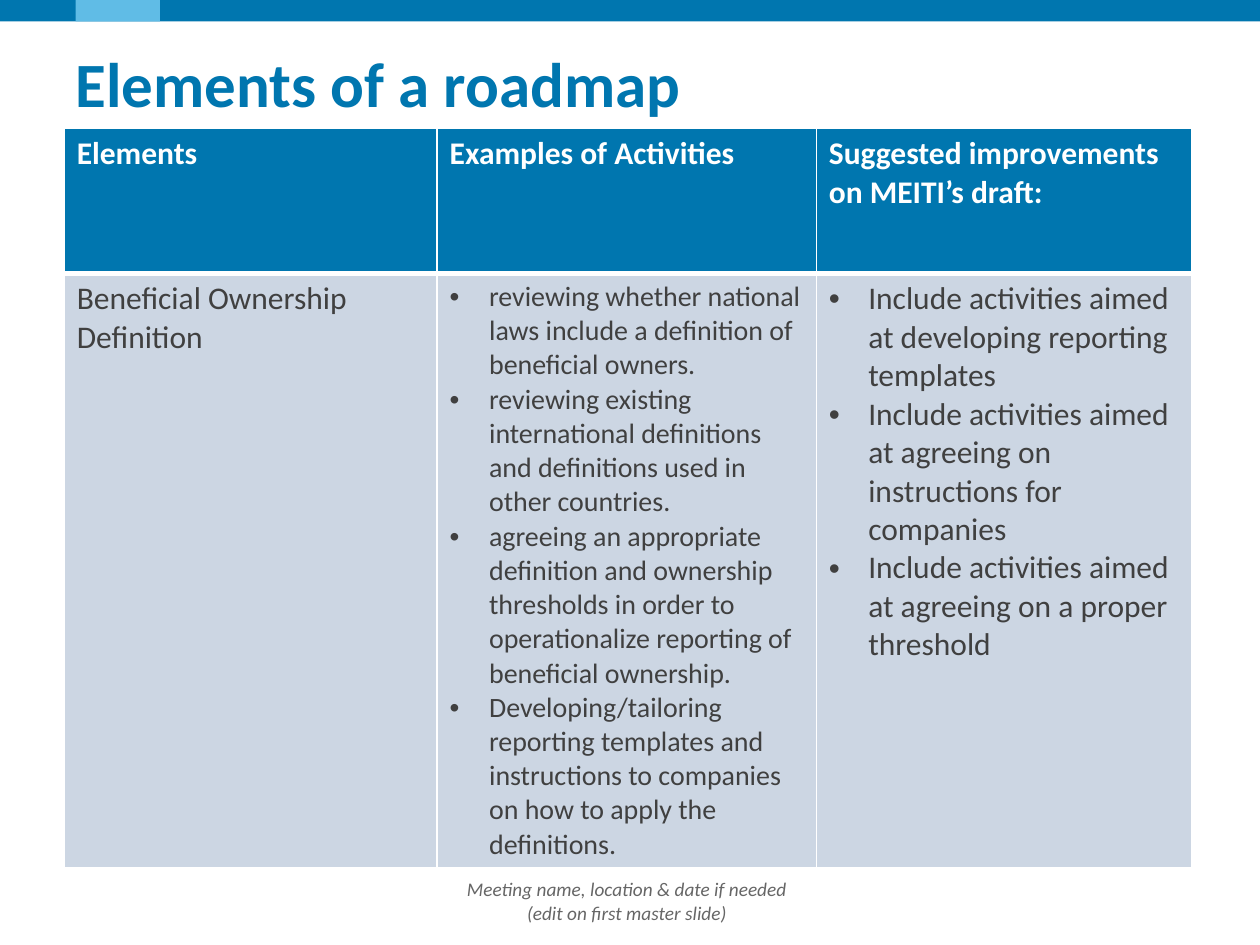
from lxml import etree
from pptx import Presentation
from pptx.dml.color import RGBColor
from pptx.enum import shapes, text
from pptx.oxml import ns
from pptx.util import Pt

# Content
TITLE = "Elements of a roadmap"
FOOTER = "Meeting name, location & date if needed\n(edit on first master slide)"
HEADERS = ["Elements", "Examples of Activities", "Suggested improvements on MEITI’s draft:"]
DEFINITION = ["Beneficial Ownership Definition"]
ACTIVITIES = [
    "reviewing whether national laws include a definition of beneficial owners.",
    "reviewing existing international definitions and definitions used in other countries.",
    "agreeing an appropriate definition and ownership thresholds in order to "
    "operationalize reporting of beneficial ownership.",
    "Developing/tailoring reporting templates and instructions to companies "
    "on how to apply the definitions.",
]
IMPROVEMENTS = [
    "Include activities aimed at developing reporting templates",
    "Include activities aimed at agreeing on instructions for companies",
    "Include activities aimed at agreeing on a proper threshold",
]
# Body cells: paragraphs, text size, bulleted
BODY = [(DEFINITION, 18, False), (ACTIVITIES, 16, True), (IMPROVEMENTS, 18, True)]

# Look and layout, in points
BLUE, LIGHT_BLUE, PALE, WHITE, DARK, GREY = "0076AF", "60BCE6", "CCD6E3", "FFFFFF", "404040", "666666"
BARS = [((0, -0.7, 720, 13), BLUE), ((43.2, -0.7, 48.2, 13), LIGHT_BLUE)]
TITLE_BOX = (43.2, 21.6, 620, 51.8)
FOOTER_BOX = (175, 500.4, 366.5, 28.8)
TABLE_LEFT, TABLE_TOP = 36.7, 73.5
COLUMNS = [213.1, 216.7, 214.6]
ROWS = [82.8, 334.1]
INDENT = 22.5


def color(value):
    return RGBColor.from_string(value)


def points(values):
    return [Pt(value) for value in values]


def write(paragraph, content, **formats):
    paragraph.text = content
    font = paragraph.font
    font.color.rgb = color(formats.pop("color"))
    for name, value in {"name": "Calibri", **formats}.items():
        setattr(font, name, value)


def set_frame(frame, anchor):
    formats = {"word_wrap": True, "auto_size": text.MSO_AUTO_SIZE.NONE, "vertical_anchor": anchor,
               "margin_left": 0, "margin_right": 0, "margin_top": Pt(3.6), "margin_bottom": Pt(3.6)}
    for name, value in formats.items():
        setattr(frame, name, value)


def add_bullet(paragraph):
    properties = paragraph._p.get_or_add_pPr()
    properties.set("marL", str(Pt(INDENT)))
    properties.set("indent", str(-Pt(INDENT)))
    etree.SubElement(properties, ns.qn("a:buFont"), typeface="Arial")
    etree.SubElement(properties, ns.qn("a:buChar"), char="•")


def format_cell(cell, fill, borders):
    properties = cell._tc.get_or_add_tcPr()
    for side, width in borders.items():
        line = etree.SubElement(properties, ns.qn("a:ln" + side), w=str(Pt(width)))
        solid = etree.SubElement(line, ns.qn("a:solidFill"))
        etree.SubElement(solid, ns.qn("a:srgbClr"), val=WHITE)
    cell.fill.solid()
    cell.fill.fore_color.rgb = color(fill)


def add_bars(slide):
    for box, fill in BARS:
        bar = slide.shapes.add_shape(shapes.MSO_SHAPE.RECTANGLE, *points(box))
        bar.shadow.inherit = False
        bar.fill.solid()
        bar.fill.fore_color.rgb = color(fill)
        bar.line.fill.background()


def add_footer(slide):
    frame = slide.shapes.add_textbox(*points(FOOTER_BOX)).text_frame
    set_frame(frame, text.MSO_ANCHOR.MIDDLE)
    paragraph = frame.paragraphs[0]
    write(paragraph, FOOTER, size=Pt(11), color=GREY, italic=True)
    paragraph.alignment = text.PP_ALIGN.CENTER


def add_title(slide):
    title = slide.shapes.title
    title.left, title.top, title.width, title.height = points(TITLE_BOX)
    set_frame(title.text_frame, text.MSO_ANCHOR.TOP)
    paragraph = title.text_frame.paragraphs[0]
    write(paragraph, TITLE, size=Pt(36), color=BLUE, bold=True)
    paragraph.alignment = text.PP_ALIGN.LEFT


def add_table(slide):
    box = points((TABLE_LEFT, TABLE_TOP, sum(COLUMNS), sum(ROWS)))
    table = slide.shapes.add_table(len(ROWS), len(COLUMNS), *box).table
    table.horz_banding = False
    for column, width in zip(table.columns, COLUMNS):
        column.width = Pt(width)
    for row, height in zip(table.rows, ROWS):
        row.height = Pt(height)

    # Header row
    for index, header in enumerate(HEADERS):
        cell = table.cell(0, index)
        write(cell.text_frame.paragraphs[0], header, size=Pt(18), color=WHITE, bold=True)
        format_cell(cell, BLUE, {"L": 1, "R": 1, "T": 1, "B": 3})

    # Body row
    for index, (items, size, bulleted) in enumerate(BODY):
        cell = table.cell(1, index)
        frame = cell.text_frame
        for number, item in enumerate(items):
            paragraph = frame.add_paragraph() if number else frame.paragraphs[0]
            if bulleted:
                add_bullet(paragraph)
            write(paragraph, item, size=Pt(size), color=DARK, bold=False)
        format_cell(cell, PALE, {"L": 1, "R": 1, "T": 3, "B": 1})


def main():
    presentation = Presentation()
    presentation.slide_width, presentation.slide_height = Pt(720), Pt(540)
    slide = presentation.slides.add_slide(presentation.slide_layouts[5])
    add_bars(slide)
    add_footer(slide)
    add_title(slide)
    add_table(slide)
    presentation.save("out.pptx")


if __name__ == "__main__":
    main()
